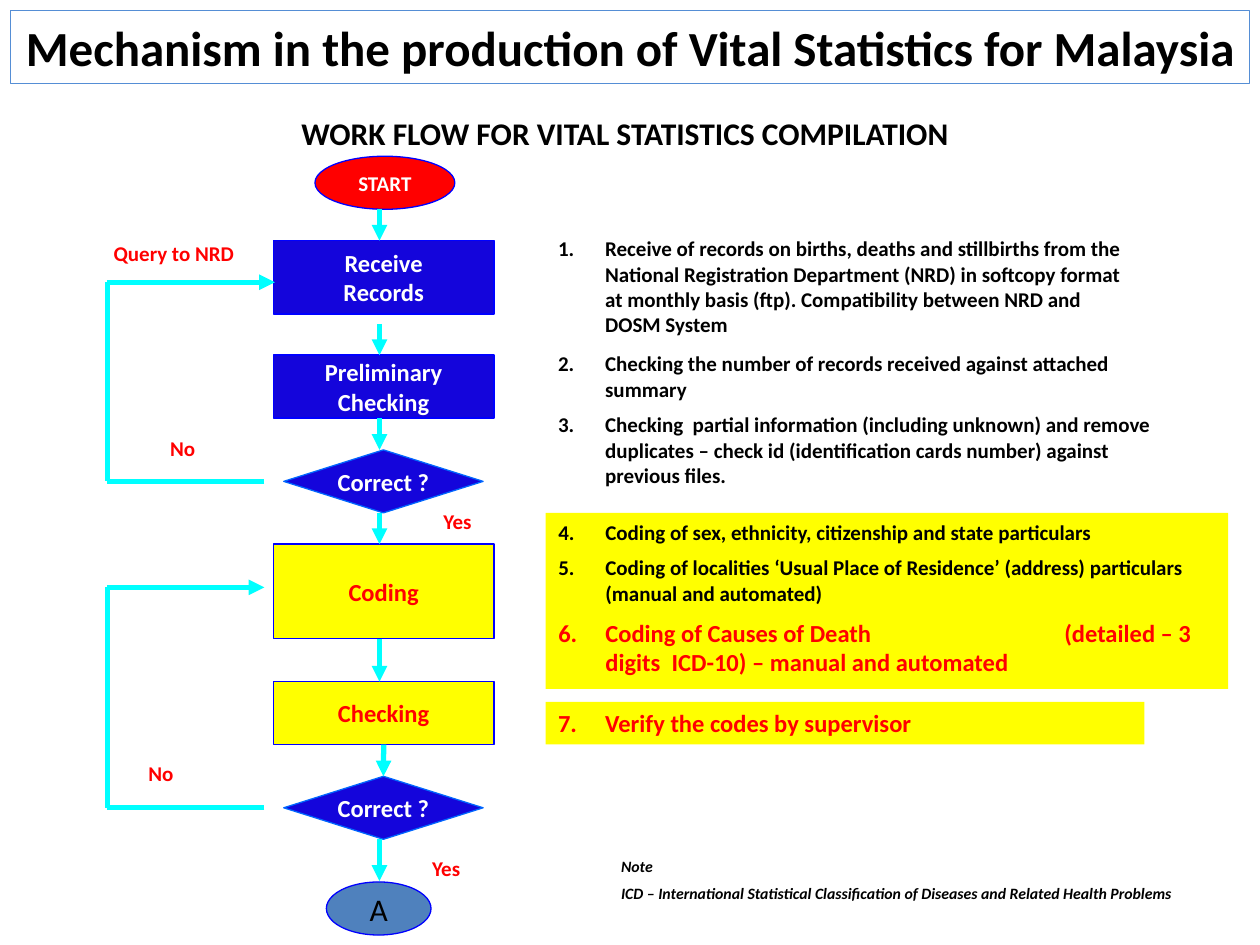
from dataclasses import dataclass
from typing import Optional

from lxml.etree import SubElement
from pptx import Presentation
from pptx.dml.color import RGBColor
from pptx.enum.shapes import MSO_CONNECTOR, MSO_SHAPE
from pptx.enum.text import MSO_ANCHOR, MSO_AUTO_SIZE, PP_ALIGN
from pptx.oxml.ns import qn
from pptx.util import Cm, Pt

BLACK, WHITE, RED, YELLOW = "000000", "FFFFFF", "FF0000", "FFFF00"
NAVY, BLUE, CYAN, STEEL = "1405DB", "0000FF", "00FFFF", "4F81BD"
FLOW_X, LOOP_X, LOOP_END = 7.65, 2.16, 5.33
LIST_INDENT = Cm(0.95)


@dataclass
class Step:
    kind: MSO_SHAPE
    box: tuple
    text: str
    fill: str
    color: str = WHITE
    line: str = BLUE
    size: int = 14
    bold: bool = True


@dataclass
class Label:
    text: str
    box: tuple
    align: PP_ALIGN = PP_ALIGN.LEFT


@dataclass
class Loop:
    bottom: float
    top: float
    end: float


@dataclass
class Item:
    number: int
    text: str
    size: int = 12
    color: str = BLACK
    tab: Optional[float] = None


STEPS = [
    Step(MSO_SHAPE.OVAL, (6.35, 3.15, 2.82, 1.07), "START", RED, size=12),
    Step(MSO_SHAPE.RECTANGLE, (5.51, 4.85, 4.45, 1.48), "Receive\nRecords", NAVY),
    Step(MSO_SHAPE.RECTANGLE, (5.51, 7.16, 4.45, 1.27), "Preliminary\nChecking", NAVY),
    Step(MSO_SHAPE.DIAMOND, (5.72, 9.07, 4.02, 1.27), "Correct ?", NAVY, line="0066FF"),
    Step(MSO_SHAPE.RECTANGLE, (5.51, 10.97, 4.45, 1.91), "Coding", YELLOW, RED),
    Step(MSO_SHAPE.RECTANGLE, (5.51, 13.74, 4.45, 1.27), "Checking", YELLOW, RED),
    Step(MSO_SHAPE.FLOWCHART_DECISION, (5.72, 15.65, 4.02, 1.27), "Correct ?", NAVY,
         line="0066FF"),
    Step(MSO_SHAPE.OVAL, (6.58, 17.78, 2.11, 1.07), "A", STEEL, BLACK, size=18, bold=False),
]
ARROWS = [(4.22, 4.85), (6.53, 7.16), (8.43, 9.07), (10.34, 10.97), (12.88, 13.74),
          (16.92, 17.76)]
LOOPS = [Loop(9.7, 5.69, 5.54), Loop(16.28, 11.84, LOOP_END)]
LABELS = [
    Label("Query to NRD", (1.7, 4.72, 3.61, 0.76), PP_ALIGN.CENTER),
    Label("No", (3.18, 8.66, 1.91, 0.76)),
    Label("Yes", (8.69, 10.13, 1.7, 0.76)),
    Label("No", (2.74, 15.21, 2.74, 0.76)),
    Label("Yes", (8.46, 17.12, 1.47, 0.76)),
]
RECEIVING = [
    Item(1, "Receive of records on births, deaths and stillbirths from the National "
            "Registration Department (NRD) in softcopy format at monthly basis (ftp). "
            "Compatibility between NRD and DOSM System"),
]
CHECKING = [
    Item(2, "Checking the number of records received against attached summary"),
    Item(3, "Checking  partial information (including unknown) and remove duplicates – "
            "check id (identification cards number) against previous files."),
]
CODING = [
    Item(4, "Coding of sex, ethnicity, citizenship and state particulars"),
    Item(5, "Coding of localities ‘Usual Place of Residence’ (address) particulars "
            "(manual and automated)"),
    Item(6, "Coding of Causes of Death\t(detailed – 3 digits  ICD-10) – manual and automated",
         14, RED, 10.2),
]
VERIFYING = [Item(7, "Verify the codes by supervisor", 14, RED)]


def rgb(value: str) -> RGBColor:
    return RGBColor.from_string(value)


def place(sp, box: tuple) -> None:
    sp.left, sp.top, sp.width, sp.height = (Cm(v) for v in box)


def write(p, text: str, *, size=12, color=BLACK, bold=True, italic=False,
          align=PP_ALIGN.LEFT, before=0.0) -> None:
    p.alignment, p.space_before = align, Pt(before)
    r = p.add_run()
    r.text = text
    f = r.font
    f.name, f.size, f.bold, f.italic = "Calibri", Pt(size), bold, italic
    f.color.rgb = rgb(color)


def paragraphs(tf, count: int) -> list:
    return [tf.paragraphs[0]] + [tf.add_paragraph() for _ in range(count - 1)]


def frame(sp, anchor=MSO_ANCHOR.TOP, wrap=True):
    tf = sp.text_frame
    tf.word_wrap, tf.auto_size, tf.vertical_anchor = wrap, MSO_AUTO_SIZE.NONE, anchor
    return tf


def add_text(s, box: tuple):
    return s.shapes.add_textbox(*(Cm(v) for v in box))


def add_step(s, step: Step):
    sp = s.shapes.add_shape(step.kind, *(Cm(v) for v in step.box))
    sp.shadow.inherit = False
    sp.fill.solid()
    sp.fill.fore_color.rgb = rgb(step.fill)
    sp.line.color.rgb, sp.line.width = rgb(step.line), Pt(0.75)
    lines = step.text.split("\n")
    for p, line in zip(paragraphs(frame(sp, MSO_ANCHOR.MIDDLE, False), len(lines)), lines):
        write(p, line, size=step.size, color=step.color, bold=step.bold,
              align=PP_ALIGN.CENTER)
    return sp


def add_line(s, start: tuple, end: tuple, arrow=False):
    cn = s.shapes.add_connector(MSO_CONNECTOR.STRAIGHT, *(Cm(v) for v in start + end))
    cn.line.color.rgb, cn.line.width = rgb(CYAN), Pt(3)
    if arrow:
        SubElement(cn.line._get_or_add_ln(), qn("a:tailEnd"), type="triangle")
    SubElement(cn._element.spPr, qn("a:effectLst"))
    return cn


def add_loop(s, loop: Loop) -> None:
    points = [(LOOP_END, loop.bottom), (LOOP_X, loop.bottom), (LOOP_X, loop.top),
              (loop.end, loop.top)]
    for i, (start, end) in enumerate(zip(points, points[1:])):
        add_line(s, start, end, arrow=i == 2)


def fill_list(sp, items: list, fill: Optional[str] = None) -> None:
    if fill:
        sp.fill.solid()
        sp.fill.fore_color.rgb = rgb(fill)
    tf = frame(sp)
    for i, (p, item) in enumerate(zip(paragraphs(tf, len(items)), items)):
        write(p, item.text, size=item.size, color=item.color, before=item.size / 2 if i else 0)
        ppr = p._p.get_or_add_pPr()
        ppr.set("marL", str(LIST_INDENT))
        ppr.set("indent", str(-LIST_INDENT))
        SubElement(ppr, qn("a:buFont"), typeface="Calibri")
        SubElement(ppr, qn("a:buAutoNum"), type="arabicPeriod", startAt=str(item.number))
        if item.tab:
            tabs = SubElement(ppr, qn("a:tabLst"))
            SubElement(tabs, qn("a:tab"), pos=str(Cm(item.tab)), algn="l")


def main() -> None:
    prs = Presentation()
    prs.slide_width, prs.slide_height = Cm(25.4), Cm(19.05)
    s = prs.slides.add_slide(prs.slide_layouts[1])

    title, body = s.shapes.title, s.placeholders[1]
    place(title, (0.21, 0.21, 24.98, 1.48))
    title.line.color.rgb, title.line.width = rgb("558ED5"), Pt(0.75)
    write(frame(title, MSO_ANCHOR.MIDDLE).paragraphs[0],
          "Mechanism in the production of Vital Statistics for Malaysia",
          size=28, align=PP_ALIGN.CENTER)
    heading = add_text(s, (5.72, 2.12, 13.76, 1.06))
    write(frame(heading, MSO_ANCHOR.BOTTOM).paragraphs[0],
          "WORK FLOW FOR VITAL STATISTICS COMPILATION", size=18, align=PP_ALIGN.CENTER)

    place(body, (11, 10.34, 13.76, 3.55))
    fill_list(body, CODING, YELLOW)
    fill_list(add_text(s, (11, 4.63, 11.86, 2.31)), RECEIVING)
    fill_list(add_text(s, (11, 6.95, 12.5, 3.07)), CHECKING)
    fill_list(add_text(s, (11, 14.15, 12.07, 0.86)), VERIFYING, YELLOW)

    steps = [add_step(s, step) for step in STEPS]
    for top, bottom in ARROWS:
        add_line(s, (FLOW_X, top), (FLOW_X, bottom), arrow=True)
    check = add_line(s, (7.73, 15.01), (7.73, 15.65), arrow=True)
    check.begin_connect(steps[5], 2)
    check.end_connect(steps[6], 0)
    for loop in LOOPS:
        add_loop(s, loop)
    for label in LABELS:
        write(frame(add_text(s, label.box)).paragraphs[0], label.text, color=RED,
              align=label.align)

    notes = ["Note", "ICD – International Statistical Classification of Diseases and "
                     "Related Health Problems"]
    tf = frame(add_text(s, (12.27, 17.15, 12.07, 1.6)))
    for i, (p, note) in enumerate(zip(paragraphs(tf, len(notes)), notes)):
        write(p, note, size=9, italic=True, before=4.5 * i)
    prs.save("out.pptx")


if __name__ == "__main__":
    main()
